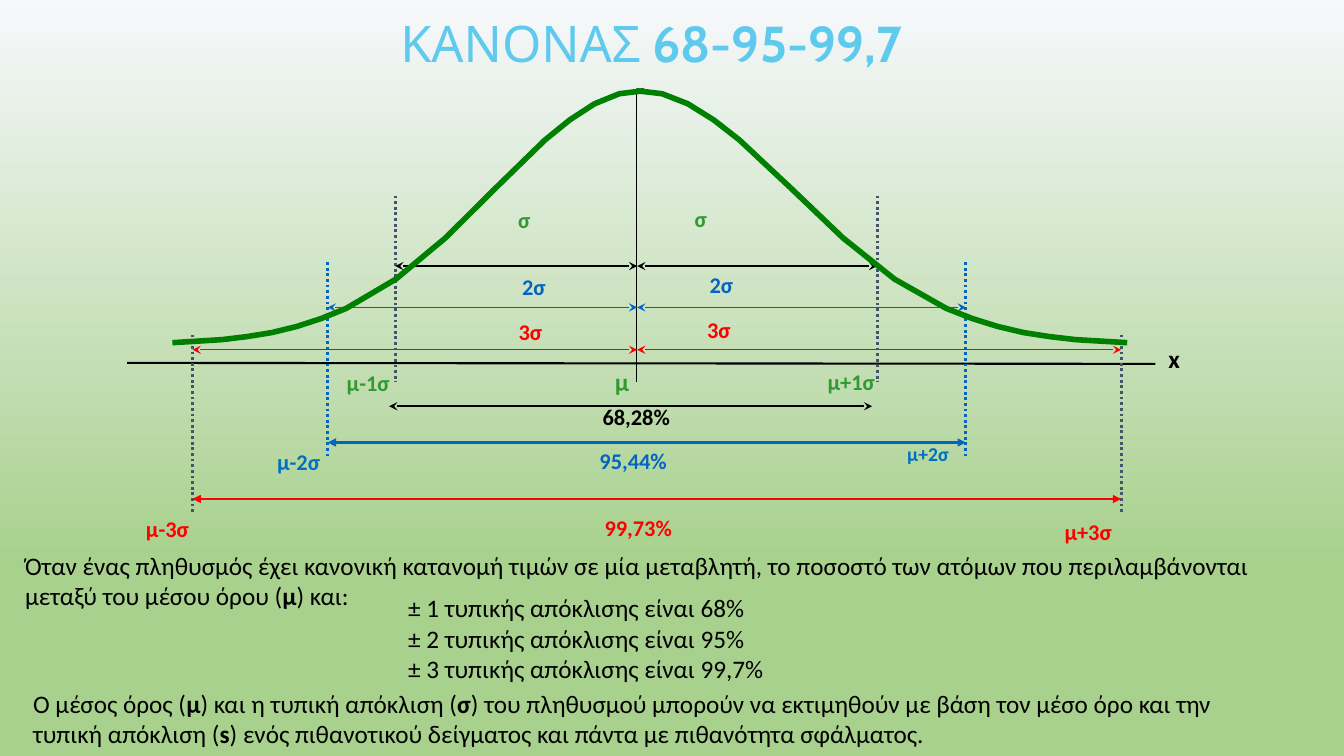
import pptx
import pptx.dml.color
import pptx.enum.dml
import pptx.enum.shapes
import pptx.enum.text
import pptx.util
from lxml import etree
from pptx.oxml.ns import qn

Inches = pptx.util.Inches
RGBColor = pptx.dml.color.RGBColor
PP_ALIGN = pptx.enum.text.PP_ALIGN
MSO_ANCHOR = pptx.enum.text.MSO_ANCHOR

BLACK = RGBColor(0x00, 0x00, 0x00)
RED = RGBColor(0xFF, 0x00, 0x00)
BLUE = RGBColor(0x05, 0x63, 0xC1)
LIGHT_BLUE = RGBColor(0x00, 0x70, 0xC0)
GREEN = RGBColor(0x33, 0x99, 0x33)
CURVE_GREEN = RGBColor(0x00, 0x80, 0x00)
SLATE = RGBColor(0x44, 0x54, 0x6A)
SKY = RGBColor(0x5F, 0xCA, 0xEE)
BG_TOP = RGBColor(0xF6, 0xF8, 0xFC)
BG_BOTTOM = RGBColor(0xA9, 0xD1, 0x8E)

MEAN_X = 6.32
# Bell curve: steps from the outer end, and the height at each step
CURVE_STEPS = [0, 2, 3, 4, 5, 6, 7, 9, 11, 13, 14, 15, 16, 17, 18, 19]
CURVE_Y = [3.4, 3.37, 3.34, 3.3, 3.24, 3.16, 3.06, 2.77, 2.36, 1.87,
           1.63, 1.39, 1.19, 1.03, 0.93, 0.9]


def add_text(slide, text, x, y, w, h, size=16, color=BLACK, bold=False,
             font="Calibri", align=PP_ALIGN.LEFT, wrap=True,
             anchor=MSO_ANCHOR.TOP, inset=True):
    """Add a text box; parts between asterisks are bold."""
    box = slide.shapes.add_textbox(Inches(x), Inches(y), Inches(w), Inches(h))
    tf = box.text_frame
    tf.word_wrap = wrap
    tf.vertical_anchor = anchor
    if not inset:
        tf.margin_left = tf.margin_right = tf.margin_top = tf.margin_bottom = 0
    for i, line in enumerate(text.split("\n")):
        p = tf.paragraphs[0] if i == 0 else tf.add_paragraph()
        p.alignment = align
        for j, part in enumerate(line.split("*")):
            if not part:
                continue
            r = p.add_run()
            r.text = part
            r.font.name = font
            r.font.size = pptx.util.Pt(size)
            r.font.bold = bold or j % 2 == 1
            r.font.color.rgb = color


def add_line(slide, x1, y1, x2, y2, color, width, dotted=False, arrows=None):
    """Add a straight line, dotted or with an arrowhead at both ends."""
    sp = slide.shapes.add_connector(
        pptx.enum.shapes.MSO_CONNECTOR.STRAIGHT,
        Inches(x1), Inches(y1), Inches(x2), Inches(y2))
    sp.line.color.rgb = color
    sp.line.width = pptx.util.Pt(width)
    if dotted:
        sp.line.dash_style = pptx.enum.dml.MSO_LINE.ROUND_DOT
    if arrows:
        ln = sp.line._get_or_add_ln()
        for end in ("a:headEnd", "a:tailEnd"):
            etree.SubElement(ln, qn(end)).set("type", arrows)
    etree.SubElement(sp._element.spPr, qn("a:effectLst"))


def add_half_curve(slide, outer_x, inner_x):
    """Add one half of the bell curve, from its outer end to the peak."""
    step = (inner_x - outer_x) / CURVE_STEPS[-1]
    points = [(Inches(outer_x + n * step), Inches(y))
              for n, y in zip(CURVE_STEPS, CURVE_Y)]
    builder = slide.shapes.build_freeform(*points[0], scale=1.0)
    builder.add_line_segments(points[1:], close=False)
    sp = builder.convert_to_shape()
    sp.fill.background()
    sp.line.color.rgb = CURVE_GREEN
    sp.line.width = pptx.util.Pt(4)
    sp.shadow.inherit = False


def set_background(slide):
    fill = slide.background.fill
    fill.gradient()
    fill.gradient_angle = 270
    stops = fill.gradient_stops
    for stop, position, color in zip(stops, (0, 0.74), (BG_TOP, BG_BOTTOM)):
        stop.position = position
        stop.color.rgb = color


def main():
    prs = pptx.Presentation()
    prs.slide_width, prs.slide_height = Inches(13.33), Inches(7.5)
    slide = prs.slides.add_slide(prs.slide_layouts[6])
    set_background(slide)

    # Title
    add_text(slide, "ΚΑΝΟΝΑΣ *68-95-99,7*", 3.97, 0.11, 5.41, 0.62, size=36,
             color=SKY, font="Cabin", anchor=MSO_ANCHOR.MIDDLE, inset=False)

    # Mean line and axis
    add_line(slide, 6.31, 0.9, 6.31, 3.79, BLACK, 1)
    add_line(slide, 1.26, 3.6, 11.46, 3.61, BLACK, 1.5)

    # Bands: left, right, dotted top and bottom, dotted colour, sigma arrow y,
    # arrow colour
    bands = [
        (3.92, 8.7, 1.94, 3.79, SLATE, 2.64, BLACK),
        (3.25, 9.58, 2.6, 4.53, BLUE, 3.05, BLUE),
        (1.91, 11.12, 3.32, 5.1, SLATE, 3.47, RED),
    ]
    for left, right, top, bottom, dot_color, arrow_y, color in bands:
        for x in (left, right):
            add_line(slide, x, top, x, bottom, dot_color, 2, dotted=True)
        for x1, x2 in ((left, MEAN_X), (MEAN_X, right)):
            add_line(slide, x1, arrow_y, x2, arrow_y, color, 1,
                     arrows="stealth")

    # Full-width arrows below the axis
    for x1, x2, y, color, arrows in [
        (3.86, 8.65, 4.03, BLACK, "stealth"),
        (3.25, 9.58, 4.39, BLUE, "triangle"),
        (1.91, 11.12, 4.95, RED, "triangle"),
    ]:
        add_line(slide, x1, y, x2, y, color, 1.5, arrows=arrows)

    # Bell curve
    add_half_curve(slide, 11.18, 6.31)
    add_half_curve(slide, 1.71, 6.39)

    # Labels on the axis and the dotted lines
    for text, x, y, w, size, color in [
        ("μ", 6, 3.58, 0.69, 18, GREEN),
        ("σ", 5.04, 2, 0.74, 16, GREEN),
        ("σ", 6.79, 1.99, 0.62, 16, GREEN),
        ("μ-1σ", 3.34, 3.61, 1.32, 16, GREEN),
        ("μ+1σ", 8.11, 3.6, 1.44, 16, GREEN),
        ("μ-2σ", 2.65, 4.4, 1.36, 16, LIGHT_BLUE),
        ("μ+2σ", 8.9, 4.33, 1.44, 14, LIGHT_BLUE),
        ("μ-3σ", 1.35, 5.06, 1.36, 16, RED),
        ("μ+3σ", 10.46, 5.09, 1.44, 16, RED),
    ]:
        add_text(slide, text, x, y, w, 0.41, size=size, color=color, bold=True)
    add_text(slide, "x", 11.49, 3.36, 0.59, 0.45, size=18, bold=True,
             wrap=False)

    # Centred distances and percentages
    for text, x, y, w, color in [
        ("2σ", 4.8, 2.66, 0.99, BLUE),
        ("2σ", 6.66, 2.64, 0.99, BLUE),
        ("3σ", 4.83, 3.11, 0.86, RED),
        ("3σ", 6.66, 3.09, 0.94, RED),
        ("68,28%", 5.34, 3.95, 1.94, BLACK),
        ("95,44%", 5.18, 4.39, 2.2, BLUE),
        ("99,73%", 5.33, 5.05, 2, RED),
    ]:
        add_text(slide, text, x, y, w, 0.41, color=color, bold=True,
                 align=PP_ALIGN.CENTER)

    # Explanation
    add_text(slide, "Όταν ένας πληθυσμός έχει κανονική κατανομή τιμών σε μία "
             "μεταβλητή, το ποσοστό των ατόμων που περιλαμβάνονται μεταξύ "
             "του μέσου όρου (*μ*) και:", 0.15, 5.41, 13.03, 0.71, size=18)
    add_text(slide, "± 1 τυπικής απόκλισης είναι 68%\n"
             "± 2 τυπικής απόκλισης είναι 95%\n"
             "± 3 τυπικής απόκλισης είναι 99,7%",
             3.95, 5.83, 3.81, 1.01, size=18)
    add_text(slide, "Ο μέσος όρος (*μ*) και η τυπική απόκλιση (*σ*) του "
             "πληθυσμού μπορούν να εκτιμηθούν με βάση τον μέσο όρο και την "
             "τυπική απόκλιση (*s*) ενός πιθανοτικού δείγματος και πάντα με "
             "πιθανότητα σφάλματος.", 0.23, 6.78, 12.41, 0.71, size=18)

    prs.save("out.pptx")


if __name__ == "__main__":
    main()
